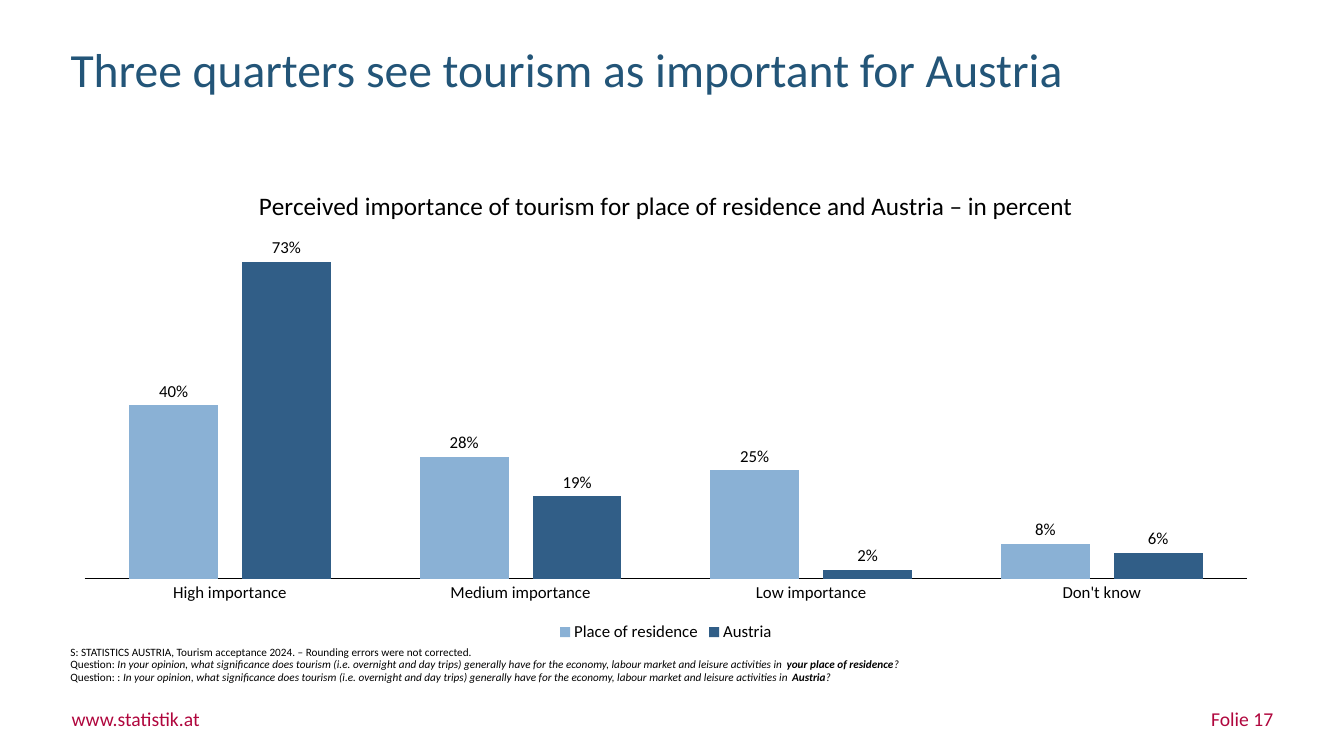
from lxml import etree
from pptx import Presentation
from pptx.chart.data import CategoryChartData
from pptx.dml.color import RGBColor
from pptx.enum import chart as kinds, text
from pptx.oxml.ns import qn
from pptx.util import Inches, Pt

# Content
FONT = "Calibri"
BLACK, TITLE_BLUE, FOOTER_RED = "000000", "235578", "B0063D"
TITLE = "Three quarters see tourism as important for Austria"
CHART_TITLE = "Perceived importance of tourism for place of residence and Austria – in percent"
CATEGORIES = ["High importance", "Medium importance", "Low importance", "Don't know"]
SERIES = [
    ("Place of residence", "8AB1D5", (0.40, 0.28, 0.25, 0.08)),
    ("Austria", "315E87", (0.73, 0.19, 0.02, 0.06)),
]
QUESTION = ("In your opinion, what significance does tourism (i.e. overnight and day trips) "
            "generally have for the economy, labour market and leisure activities in ")
# Each note is a list of (words, italic, bold)
NOTES = [[("S: STATISTICS AUSTRIA, Tourism acceptance 2024. – "
           "Rounding errors were not corrected.", False, False)]]
NOTES += [[(lead, False, False), (QUESTION, True, False), (place, True, True), ("?", True, False)]
          for lead, place in (("Question: ", "your place of residence"),
                              ("Question: : ", "Austria"))]
FOOTERS = [("www.statistik.at", 0.71, 1.29, text.PP_ALIGN.LEFT),
           ("Folie 17", 9.63, 3, text.PP_ALIGN.RIGHT)]

# Page grid in inches
LEFT, WIDTH = 0.6, 12.01
TITLE_ROW, CHART_ROW, NOTES_ROW, FOOTER_ROW = (0.41, 0.62), (1.63, 4.78), (6.36, 0.47), (7.01, 0.24)


def colour(value):
    return RGBColor.from_string(value)


def style(font, size, value=BLACK):
    font.name, font.size, font.bold = FONT, Pt(size), False
    font.color.rgb = colour(value)


def area(row, left=LEFT, width=WIDTH):
    return [Inches(n) for n in (left, row[0], width, row[1])]


def set_layout(parent, index, **shares):
    """Fix a chart part at shares of the chart's size."""
    for old in parent.findall(qn("c:layout")):
        parent.remove(old)
    layout = etree.Element(qn("c:layout"))
    manual = etree.SubElement(layout, qn("c:manualLayout"))
    if "w" in shares:
        etree.SubElement(manual, qn("c:layoutTarget")).set("val", "inner")
    for side in ("x", "y"):
        etree.SubElement(manual, qn(f"c:{side}Mode")).set("val", "edge")
    for name, share in shares.items():
        etree.SubElement(manual, qn(f"c:{name}")).set("val", str(share))
    parent.insert(index, layout)


deck = Presentation()
deck.slide_width, deck.slide_height = Inches(13.33), Inches(7.5)
page = deck.slides.add_slide(deck.slide_layouts[5])

# Title
title = page.shapes.title
title.left, title.top, title.width, title.height = area(TITLE_ROW)
title.text_frame.text = TITLE
title.text_frame.vertical_anchor = text.MSO_ANCHOR.TOP
para = title.text_frame.paragraphs[0]
para.alignment, para.line_spacing = text.PP_ALIGN.LEFT, 0.9
style(para.runs[0].font, 34, TITLE_BLUE)

# Chart
data = CategoryChartData(number_format="0%")
data.categories = CATEGORIES
for name, _, values in SERIES:
    data.add_series(name, values)
chart = page.shapes.add_chart(
    kinds.XL_CHART_TYPE.COLUMN_CLUSTERED, *area(CHART_ROW), data).chart
style(chart.font, 10)
chart.has_title = True
chart.chart_title.text_frame.text = CHART_TITLE
style(chart.chart_title.text_frame.paragraphs[0].runs[0].font, 18)
chart.chart_title.include_in_layout = False
set_layout(chart.chart_title._element, 1, x=0.16, y=0.04)
set_layout(chart._chartSpace.chart.plotArea, 0, x=0.02, y=0.14, w=0.96, h=0.72)

# Bars and their labels
plot = chart.plots[0]
plot.gap_width, plot.overlap, plot.vary_by_categories = 100, -27, False
for series, (_, fill, _) in zip(plot.series, SERIES):
    series.format.fill.solid()
    series.format.fill.fore_color.rgb = colour(fill)
    labels = series.data_labels
    labels.show_value = True
    labels.number_format, labels.number_format_is_linked = "0%", False
    labels.position = kinds.XL_LABEL_POSITION.OUTSIDE_END
    style(labels.font, 12)

# Axes and legend
value_axis, category_axis = chart.value_axis, chart.category_axis
value_axis.visible = value_axis.has_major_gridlines = False
value_axis.minimum_scale, value_axis.maximum_scale = 0, 0.8
category_axis.major_tick_mark = kinds.XL_TICK_MARK.NONE
category_axis.format.line.color.rgb = colour(BLACK)
category_axis.format.line.width = Pt(1)
style(category_axis.tick_labels.font, 12)
chart.has_legend = True
chart.legend.position = kinds.XL_LEGEND_POSITION.BOTTOM
chart.legend.include_in_layout = False
style(chart.legend.font, 12)

# Source and questions
frame = page.shapes.add_textbox(*area(NOTES_ROW)).text_frame
frame.word_wrap, frame.vertical_anchor = True, text.MSO_ANCHOR.BOTTOM
for number, note in enumerate(NOTES):
    para = frame.add_paragraph() if number else frame.paragraphs[0]
    para.line_spacing = 0.9
    for words, italic, bold in note:
        span = para.add_run()
        span.text = words
        style(span.font, 8)
        span.font.italic, span.font.bold = italic, bold

# Footer
for words, left, width, alignment in FOOTERS:
    frame = page.shapes.add_textbox(*area(FOOTER_ROW, left, width)).text_frame
    frame.margin_left = frame.margin_right = frame.margin_top = frame.margin_bottom = 0
    frame.text = words
    frame.paragraphs[0].alignment = alignment
    style(frame.paragraphs[0].runs[0].font, 14, FOOTER_RED)

deck.save("out.pptx")
